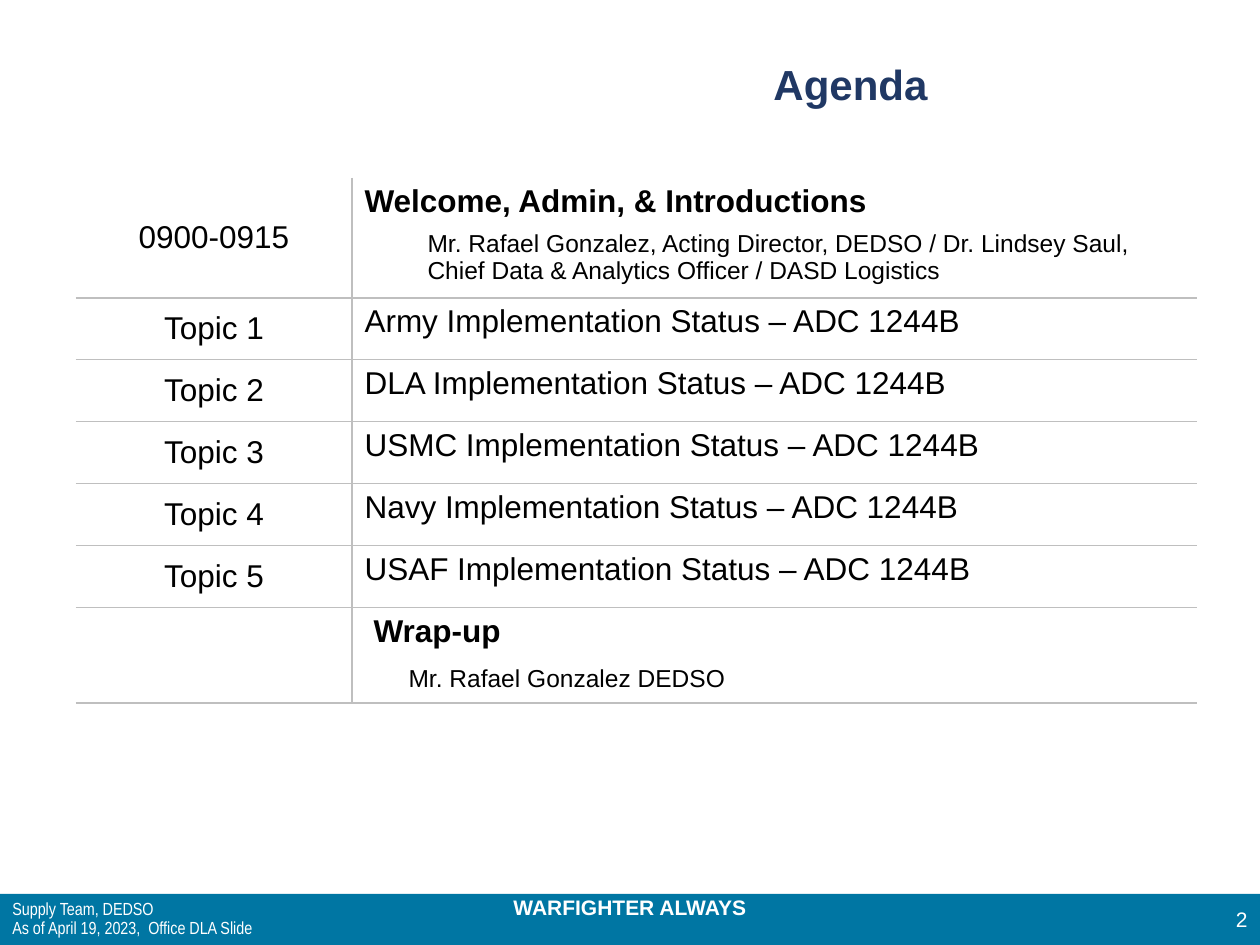
import pptx
import pptx.util
import pptx.dml.color
import pptx.enum.shapes
import pptx.enum.text
import pptx.oxml
import pptx.oxml.ns
from dataclasses import dataclass

SCALE = 914400 / 126
ALIGN = pptx.enum.text.PP_ALIGN
ANCHOR = pptx.enum.text.MSO_ANCHOR


@dataclass(frozen=True)
class Theme:
    navy: str = "203864"
    teal: str = "0076A3"
    white: str = "FFFFFF"
    black: str = "000000"
    line: str = "BFBFBF"
    head: int = 24
    main: int = 18
    note: int = 14
    foot: int = 12
    small: int = 10
    face: str = "Arial"
    thin: str = "Arial Narrow"


THEME = Theme()
TOPICS = ["Army", "DLA", "USMC", "Navy", "USAF"]


def px(count):
    return pptx.util.Emu(round(count * SCALE))


def paint(item, values):
    for name, value in values.items():
        setattr(item, name, value)


def write(para, text, size, color, bold=False, face=THEME.face, **form):
    para.text = text
    paint(para, form)
    paint(para.font, {"size": pptx.util.Pt(size), "bold": bold, "name": face})
    para.font.color.rgb = pptx.dml.color.RGBColor.from_string(color)
    for run in para.runs:
        paint(run.font, {"size": pptx.util.Pt(size), "bold": bold, "name": face})
        run.font.color.rgb = pptx.dml.color.RGBColor.from_string(color)


def add_title(slide, text):
    title = slide.shapes.title
    paint(title, {"left": px(504), "top": px(50), "width": px(693), "height": px(114)})
    paint(title.text_frame, {"vertical_anchor": ANCHOR.TOP, "margin_top": px(9),
                             "word_wrap": True})
    write(title.text_frame.paragraphs[0], text, THEME.head, THEME.navy, True,
          alignment=ALIGN.CENTER)


def add_band(slide, left, top, width, height):
    band = slide.shapes.add_shape(pptx.enum.shapes.MSO_SHAPE.RECTANGLE,
                                  px(left), px(top), px(width), px(height))
    band.shadow.inherit = False
    band.fill.solid()
    band.fill.fore_color.rgb = pptx.dml.color.RGBColor.from_string(THEME.teal)
    band.line.fill.background()


def add_label(slide, box, text, size, anchor=ANCHOR.MIDDLE, **form):
    frame = slide.shapes.add_textbox(*map(px, box)).text_frame
    paint(frame, {"word_wrap": True, "vertical_anchor": anchor})
    write(frame.paragraphs[0], text, size, THEME.white, **form)


def add_edge(cell, side, shown):
    fill = (f'<a:solidFill><a:srgbClr val="{THEME.line}"/></a:solidFill>'
            if shown else "<a:noFill/>")
    return pptx.oxml.parse_xml(
        f'<a:ln{side} {pptx.oxml.ns.nsdecls("a")} w="12700">{fill}</a:ln{side}>')


def rule_cell(cell, row, col):
    cell.fill.background()
    shown = {"L": col == 1, "R": col == 0, "T": row > 0, "B": True}
    props = cell._tc.get_or_add_tcPr()
    for place, (side, state) in enumerate(shown.items()):
        props.insert(place, add_edge(cell, side, state))


def fill_cell(cell, lines):
    frame = cell.text_frame
    for place, (text, size, bold, indent, form) in enumerate(lines):
        para = frame.paragraphs[0] if place == 0 else frame.add_paragraph()
        write(para, text, size, THEME.black, bold, **form)
        if indent:
            props = para._p.get_or_add_pPr()
            props.set("marL", str(px(indent)))
            props.set("indent", "0")


def add_table(slide, rows):
    tall = [113] + [62] * len(TOPICS) + [94]
    wide = [276, 845]
    table = slide.shapes.add_table(len(rows), 2, px(76), px(178),
                                   px(sum(wide)), px(sum(tall))).table
    paint(table, {"first_row": False, "horz_banding": False})
    for col, width in zip(table.columns, wide):
        col.width = px(width)
    for row, (time, lines) in enumerate(rows):
        table.rows[row].height = px(tall[row])
        left, right = table.cell(row, 0), table.cell(row, 1)
        left.vertical_anchor = ANCHOR.MIDDLE
        fill_cell(left, [(time, THEME.main, False, 0, {"alignment": ALIGN.CENTER})])
        fill_cell(right, lines)
        rule_cell(left, row, 0)
        rule_cell(right, row, 1)


def get_rows():
    gap = {"space_after": pptx.util.Pt(6)}
    drop = {**gap, "space_before": pptx.util.Pt(3)}
    first = [("Welcome, Admin, & Introductions", THEME.main, True, 0, gap),
             ("Mr. Rafael Gonzalez, Acting Director, DEDSO / Dr. Lindsey Saul, "
              "Chief Data & Analytics Officer / DASD Logistics",
              THEME.note, False, 63, gap)]
    last = [("Wrap-up", THEME.main, True, 9, gap),
            ("Mr. Rafael Gonzalez DEDSO", THEME.note, False, 44, drop)]
    mid = [(f"Topic {count}",
            [(f"{name} Implementation Status – ADC 1244B", THEME.main, False, 0, gap)])
           for count, name in enumerate(TOPICS, 1)]
    return [("0900-0915", first), *mid, ("", last)]


def main():
    deck = pptx.Presentation()
    paint(deck, {"slide_width": px(1260), "slide_height": px(945)})
    slide = deck.slides.add_slide(deck.slide_layouts[5])
    add_band(slide, 0, 894, 1260, 51)
    add_label(slide, (0, 888, 1260, 38), "WARFIGHTER ALWAYS", THEME.foot, ANCHOR.TOP,
              bold=True, alignment=ALIGN.CENTER)
    add_title(slide, "Agenda")
    add_label(slide, (1197, 894, 63, 51), "2", THEME.foot, alignment=ALIGN.RIGHT)
    add_label(slide, (0, 894, 378, 51),
              "Supply Team, DEDSO\vAs of April 19, 2023,  Office DLA Slide",
              THEME.small, face=THEME.thin, line_spacing=0.9)
    add_table(slide, get_rows())
    deck.save("out.pptx")


if __name__ == "__main__":
    main()
